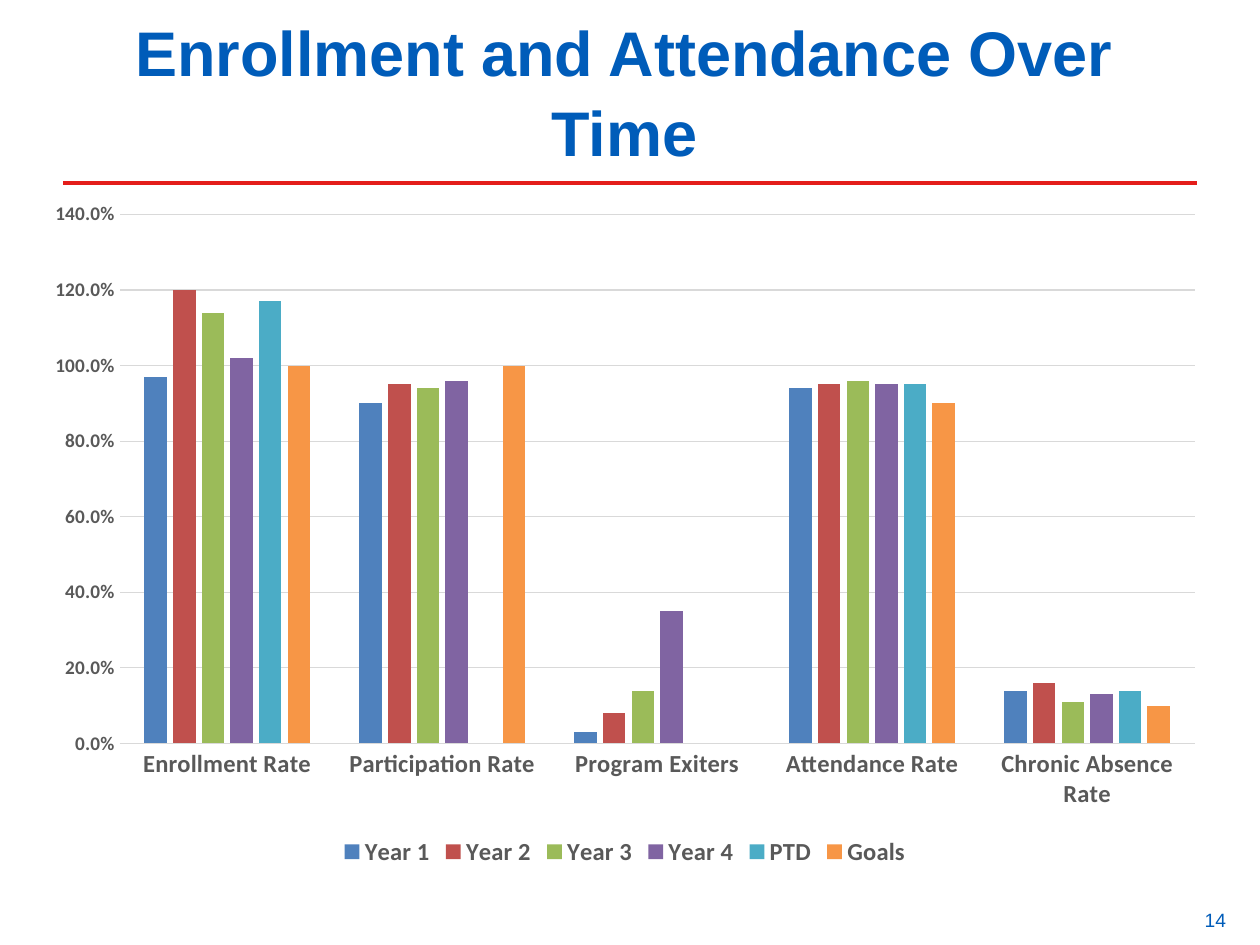
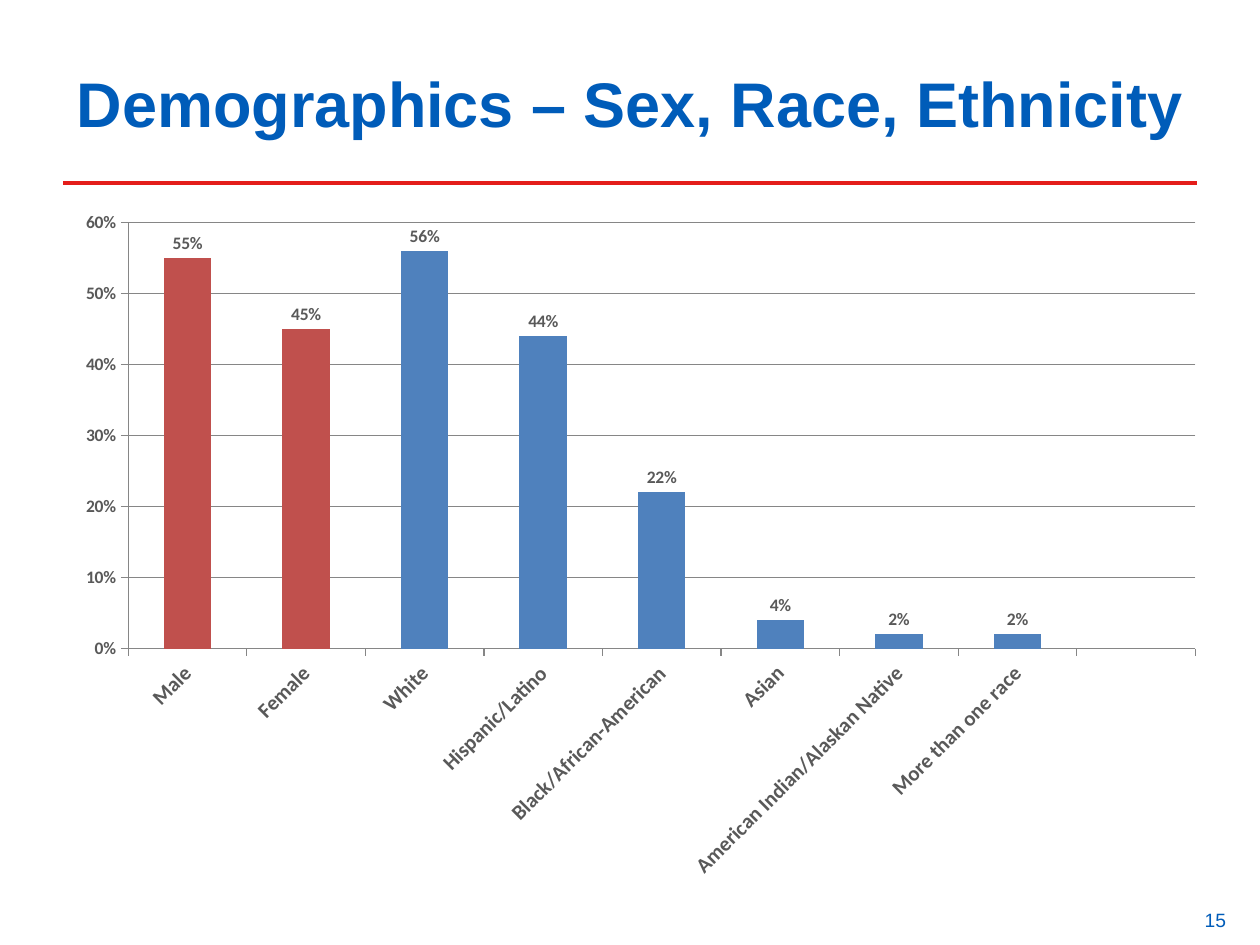
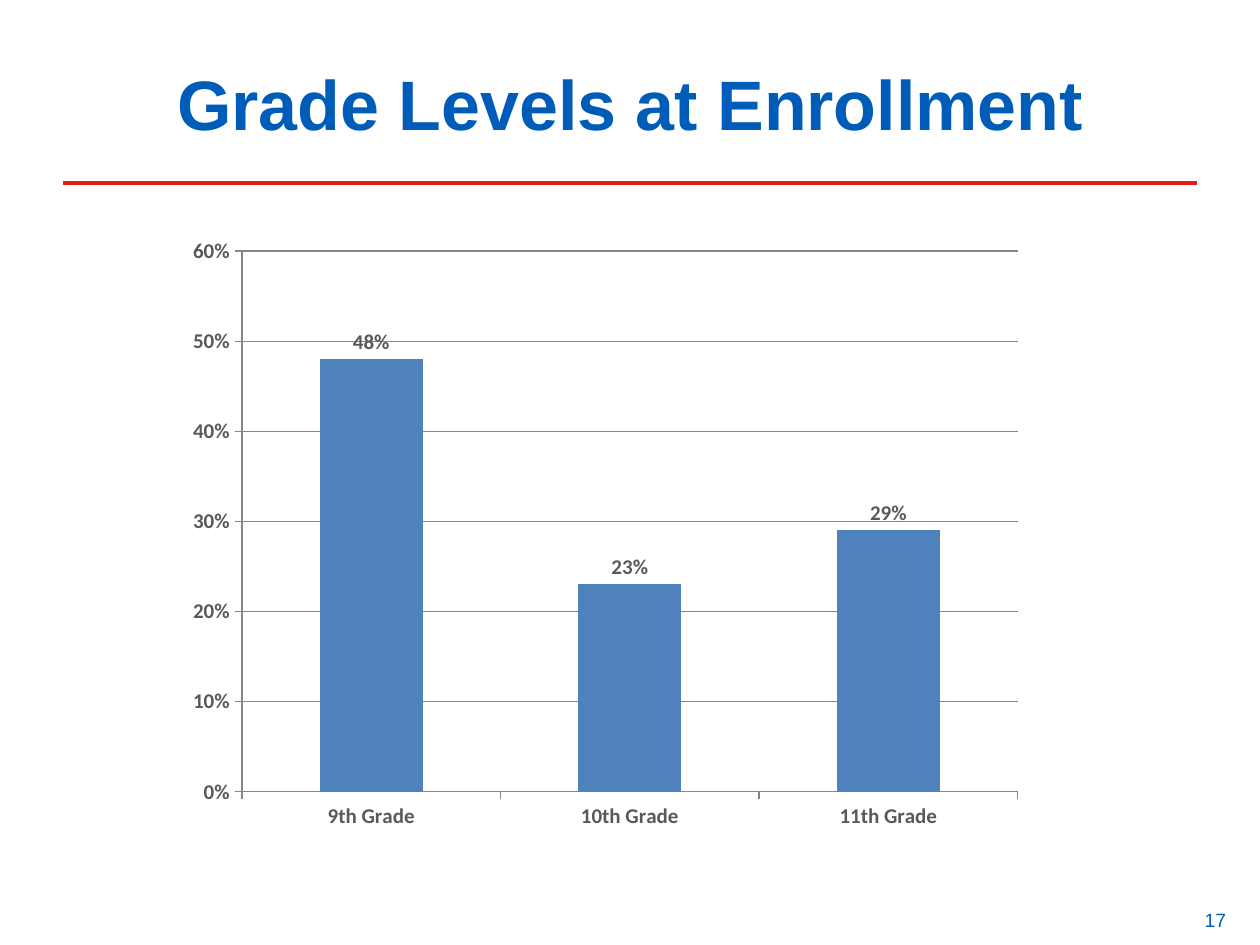
from lxml import etree
from pptx import Presentation
from pptx.chart.data import CategoryChartData
from pptx.dml.color import RGBColor
from pptx.enum.chart import XL_CHART_TYPE, XL_LABEL_POSITION, XL_LEGEND_POSITION, XL_TICK_MARK
from pptx.enum.shapes import MSO_CONNECTOR
from pptx.enum.text import MSO_ANCHOR, PP_ALIGN
from pptx.oxml.ns import qn
from pptx.util import Inches, Pt

COLUMNS = XL_CHART_TYPE.COLUMN_CLUSTERED
OUTSIDE_END = XL_LABEL_POSITION.OUTSIDE_END
LEGEND_BOTTOM = XL_LEGEND_POSITION.BOTTOM
TICK_NONE = XL_TICK_MARK.NONE
TICK_OUTSIDE = XL_TICK_MARK.OUTSIDE
STRAIGHT = MSO_CONNECTOR.STRAIGHT
MIDDLE = MSO_ANCHOR.MIDDLE
CENTER = PP_ALIGN.CENTER
RIGHT = PP_ALIGN.RIGHT

TITLE_BLUE = RGBColor(0x00, 0x5C, 0xB9)
RULE_RED = RGBColor(0xE4, 0x1D, 0x1A)
BLACK = RGBColor(0x00, 0x00, 0x00)
LABEL_GRAY = RGBColor(0x59, 0x59, 0x59)
PALE_GRAY = RGBColor(0xD9, 0xD9, 0xD9)
AXIS_GRAY = RGBColor(0x86, 0x86, 0x86)
BLUE = RGBColor(0x4F, 0x81, 0xBD)
BRICK = RGBColor(0xC0, 0x50, 0x4D)
GREEN = RGBColor(0x9B, 0xBB, 0x59)
PURPLE = RGBColor(0x80, 0x64, 0xA2)
TEAL = RGBColor(0x4B, 0xAC, 0xC6)
ORANGE = RGBColor(0xF7, 0x96, 0x46)

TEXT_FONT = "Arial"
CHART_FONT = "Calibri"
TITLE_BOX = (0.5, 0.17, 9, 1.25)


class Deck:
    def __init__(self):
        self.presentation = Presentation()
        self.presentation.slide_width = Inches(10)
        self.presentation.slide_height = Inches(7.5)
        self.slide = None

    def add_slide(self, title, number, title_box=TITLE_BOX, title_size=36):
        self.slide = self.presentation.slides.add_slide(self.presentation.slide_layouts[6])
        self.add_rule()
        self.add_text(title, title_box, title_size, CENTER, bold=True)
        self.add_text(str(number), (7.5, 7.1, 2.33, 0.4), 11, RIGHT)

    def add_rule(self):
        rule = self.slide.shapes.add_connector(
            STRAIGHT, Inches(0.5), Inches(1.45), Inches(9.5), Inches(1.45)
        )
        rule.line.color.rgb = RULE_RED
        rule.line.width = Pt(2.25)
        etree.SubElement(rule._element.spPr, qn("a:effectLst"))

    def add_text(self, text, box, size, alignment, bold=False):
        shape = self.slide.shapes.add_textbox(*map(Inches, box))
        text_frame = shape.text_frame
        text_frame.word_wrap = True
        text_frame.vertical_anchor = MIDDLE
        text_frame.text = text
        paragraph = text_frame.paragraphs[0]
        paragraph.alignment = alignment
        if bold:
            paragraph.line_spacing = 1.05
        self.style_font(paragraph.runs[0].font, size, TITLE_BLUE, bold, TEXT_FONT)

    def style_font(self, font, size, color=LABEL_GRAY, bold=True, name=CHART_FONT):
        font.name = name
        font.size = Pt(size)
        font.bold = bold
        font.color.rgb = color

    def style_line(self, line, color):
        line.color.rgb = color
        line.width = Pt(0.75)

    def add_chart(self, box, categories, series, maximum, step, size, category_size,
                  number_format="0%", line_color=AXIS_GRAY, tick=TICK_OUTSIDE, gap=150, overlap=0):
        data = CategoryChartData(number_format=number_format)
        data.categories = categories
        for name, values, color in series:
            data.add_series(name, values)
        chart = self.slide.shapes.add_chart(COLUMNS, *map(Inches, box), data).chart
        self.style_font(chart.font, size, BLACK, bold=False)
        chart.has_title = False
        chart.has_legend = False

        plot = chart.plots[0]
        plot.gap_width = gap
        plot.overlap = overlap
        plot.vary_by_categories = False
        for plotted, (name, values, color) in zip(plot.series, series):
            plotted.invert_if_negative = False
            plotted.format.fill.solid()
            plotted.format.fill.fore_color.rgb = color

        for axis, axis_size in ((chart.category_axis, category_size), (chart.value_axis, size)):
            axis.major_tick_mark = tick
            axis.minor_tick_mark = TICK_NONE
            self.style_font(axis.tick_labels.font, axis_size)
            self.style_line(axis.format.line, line_color)
        value_axis = chart.value_axis
        value_axis.minimum_scale = 0
        value_axis.maximum_scale = maximum
        value_axis.major_unit = step
        value_axis.tick_labels.number_format = number_format
        value_axis.tick_labels.number_format_is_linked = False
        self.style_line(value_axis.major_gridlines.format.line, line_color)
        return chart

    def add_legend(self, chart, size):
        chart.has_legend = True
        chart.legend.position = LEGEND_BOTTOM
        chart.legend.include_in_layout = False
        self.style_font(chart.legend.font, size)

    def add_value_labels(self, chart, size):
        labels = chart.plots[0].series[0].data_labels
        labels.show_value = True
        labels.position = OUTSIDE_END
        labels.number_format = "0%"
        labels.number_format_is_linked = False
        self.style_font(labels.font, size)

    def color_points(self, chart, count, color):
        for index in range(count):
            fill = chart.plots[0].series[0].points[index].format.fill
            fill.solid()
            fill.fore_color.rgb = color

    def slant_categories(self, chart):
        properties = chart.category_axis._element.find(f"{qn('c:txPr')}/{qn('a:bodyPr')}")
        properties.set("rot", "-2700000")
        properties.set("vert", "horz")

    def place_plot(self, chart, left, top, width, height):
        plot_area = chart._chartSpace.find(f".//{qn('c:plotArea')}")
        for layout in plot_area.findall(qn("c:layout")):
            plot_area.remove(layout)
        layout = etree.Element(qn("c:layout"))
        manual = etree.SubElement(layout, qn("c:manualLayout"))
        settings = (("layoutTarget", "inner"), ("xMode", "edge"), ("yMode", "edge"),
                    ("x", left), ("y", top), ("w", width), ("h", height))
        for tag, value in settings:
            etree.SubElement(manual, qn(f"c:{tag}")).set("val", str(value))
        plot_area.insert(0, layout)


def add_attendance(deck):
    deck.add_slide("Enrollment and Attendance Over Time", 14, (0.79, 0.25, 8.33, 0.92))
    categories = ["Enrollment Rate", "Participation Rate", "Program Exiters",
                  "Attendance Rate", "Chronic Absence Rate"]
    series = [
        ("Year 1", (0.97, 0.9, 0.03, 0.94, 0.14), BLUE),
        ("Year 2", (1.2, 0.95, 0.08, 0.95, 0.16), BRICK),
        ("Year 3", (1.14, 0.94, 0.14, 0.96, 0.11), GREEN),
        ("Year 4", (1.02, 0.96, 0.35, 0.95, 0.13), PURPLE),
        ("PTD", (1.17, None, None, 0.95, 0.14), TEAL),
        ("Goals", (1, 1, None, 0.9, 0.1), ORANGE),
    ]
    chart = deck.add_chart((0.25, 1.5, 9.42, 5.42), categories, series, 1.4, 0.2, 11, 14,
                           "0.0%", PALE_GRAY, TICK_NONE, 219, -27)
    chart.value_axis.format.line.fill.background()
    deck.add_legend(chart, 14)


def add_demographics(deck):
    deck.add_slide("Demographics – Sex, Race, Ethnicity", 15)
    categories = ["Male", "Female", "White", "Hispanic/Latino", "Black/African-American",
                  "Asian", "American Indian/Alaskan Native", "More than one race", ""]
    shares = (0.55, 0.45, 0.56, 0.44, 0.22, 0.04, 0.02, 0.02, None)
    chart = deck.add_chart((0.5, 1.58, 9.17, 5.5), categories, [("Series 1", shares, BLUE)],
                           0.6, 0.1, 10, 12)
    deck.color_points(chart, 2, BRICK)
    deck.add_value_labels(chart, 10)
    deck.slant_categories(chart)


def add_grade_levels(deck):
    deck.add_slide("Grade Levels at Enrollment", 17, title_size=40)
    chart = deck.add_chart((-0.42, 1.58, 8.67, 5.17), ["9th Grade", "10th Grade", "11th Grade"],
                           [("Series 1", (0.48, 0.23, 0.29), BLUE)], 0.6, 0.1, 12, 12)
    deck.add_value_labels(chart, 12)
    deck.place_plot(chart, 0.27, 0.08, 0.71, 0.83)


def main():
    deck = Deck()
    add_attendance(deck)
    add_demographics(deck)
    add_grade_levels(deck)
    deck.presentation.save("out.pptx")


if __name__ == "__main__":
    main()
